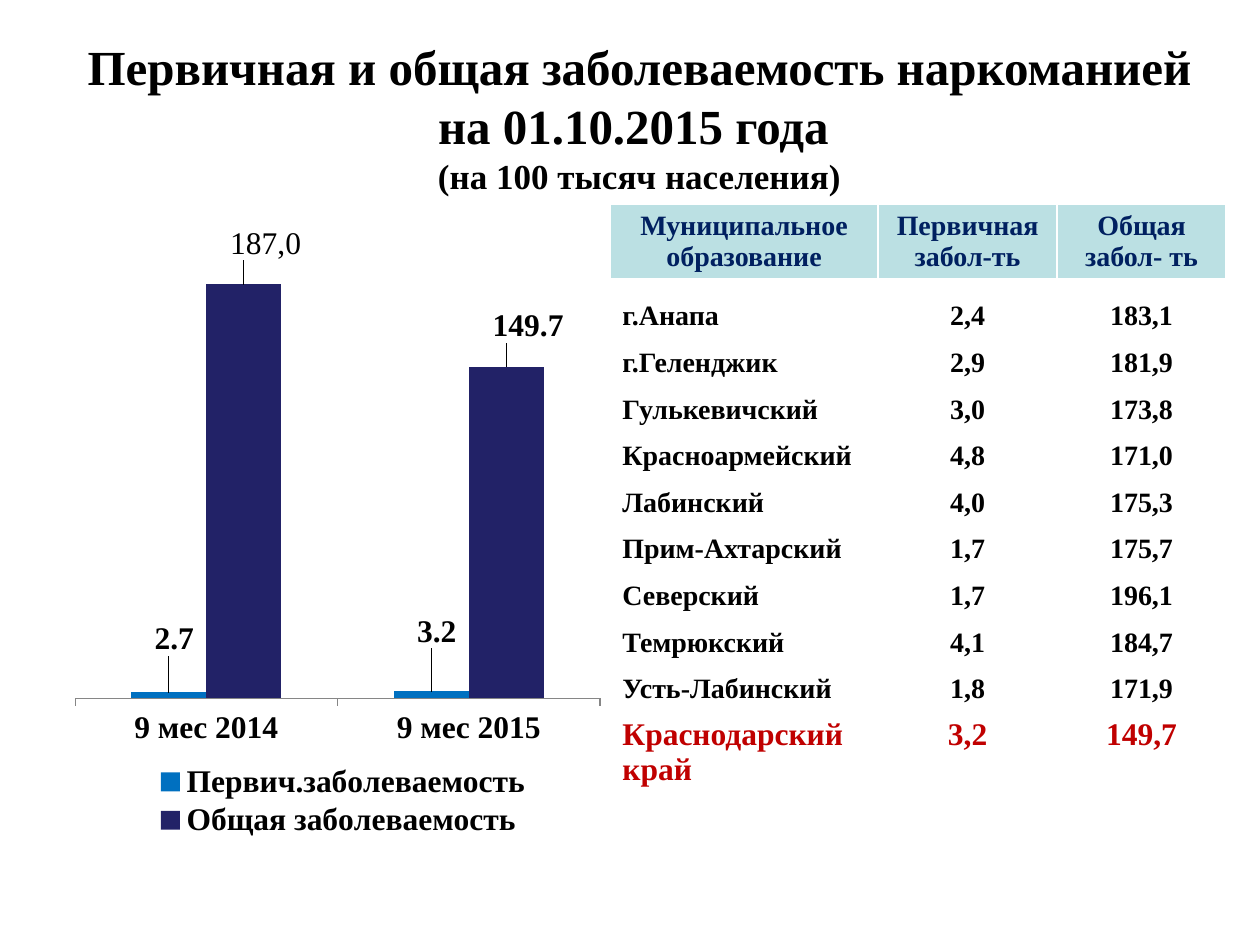
from copy import deepcopy

from lxml import etree
from pptx import Presentation
from pptx.chart.data import CategoryChartData
from pptx.dml.color import RGBColor
from pptx.enum.chart import XL_CHART_TYPE as ChartType
from pptx.enum.chart import XL_LABEL_POSITION as LabelPos
from pptx.enum.chart import XL_LEGEND_POSITION as LegendPos
from pptx.enum.chart import XL_TICK_MARK as Tick
from pptx.enum.text import MSO_ANCHOR as Anchor
from pptx.enum.text import PP_ALIGN as Align
from pptx.oxml.ns import qn
from pptx.util import Inches, Pt

FONT = "Times New Roman"
BLACK, NAVY, RED = "000000", "002060", "C00000"

DISTRICTS = [
    ("г.Анапа", "2,4", "183,1"),
    ("г.Геленджик", "2,9", "181,9"),
    ("Гулькевичский", "3,0", "173,8"),
    ("Красноармейский", "4,8", "171,0"),
    ("Лабинский", "4,0", "175,3"),
    ("Прим-Ахтарский", "1,7", "175,7"),
    ("Северский", "1,7", "196,1"),
    ("Темрюкский", "4,1", "184,7"),
    ("Усть-Лабинский", "1,8", "171,9"),
]
HEADER = ["Муниципальное образование", "Первичная забол-ть", "Общая забол- ть"]
REGION = ["Краснодарский край", "3,2", "149,7"]

# name, values, colour, label offsets as fractions of the chart
SERIES = [
    ("Первич.заболеваемость", (2.7, 3.2), "0070C0", [(0.01, -0.05), (0.01, -0.06)]),
    ("Общая заболеваемость", (187, 149.7), "222267", [(0.04, -0.03), (0.04, -0.03)]),
]


def rgb(value):
    return RGBColor.from_string(value)


def style(font, size, color=BLACK, bold=True):
    font.name, font.size, font.bold = FONT, Pt(size), bold
    font.color.rgb = rgb(color)


def place(shape, left, top, width, height):
    shape.left, shape.top = Inches(left), Inches(top)
    shape.width, shape.height = Inches(width), Inches(height)


def set_layout(parent, index, **values):
    """Give a chart part a manual layout; x and y are fractions of the chart."""
    for old in parent.findall(qn("c:layout")):
        parent.remove(old)
    layout = etree.Element(qn("c:layout"))
    manual = etree.SubElement(layout, qn("c:manualLayout"))
    for tag, value in values.items():
        etree.SubElement(manual, qn(f"c:{tag}")).set("val", str(value))
    parent.insert(index, layout)


def add_title(slide):
    title = slide.shapes.title
    place(title, 0.51, 0.3, 9.13, 1.25)
    tf = title.text_frame
    tf.vertical_anchor = Anchor.MIDDLE
    p = tf.paragraphs[0]
    p.text = ("Первичная и общая заболеваемость наркоманией на 01.10.2015 года \v"
              "(на 100 тысяч населения)")
    p.alignment = Align.CENTER
    for r, size in zip(p.runs, (28, 20)):
        style(r.font, size)
    # The line break takes the size of the line it ends
    line_break = p._p.find(qn("a:br"))
    line_break.append(deepcopy(p.runs[0]._r.find(qn("a:rPr"))))


def add_labels(series, offsets):
    labels = series.data_labels
    labels.show_value = True
    labels.position = LabelPos.OUTSIDE_END
    style(labels.font, 18)
    for i, (x, y) in enumerate(offsets):
        label = series.points[i].data_label
        style(label.font, 18)
        label.position = LabelPos.OUTSIDE_END
        dLbl = series._element.findall(".//" + qn("c:dLbl"))[i]
        set_layout(dLbl, 1, x=x, y=y)


def add_chart(slide):
    data = CategoryChartData()
    data.categories = ["9 мес 2014", "9 мес 2015"]
    for name, values, _, _ in SERIES:
        data.add_series(name, values)
    chart = slide.shapes.add_chart(
        ChartType.COLUMN_CLUSTERED, Inches(0.51), Inches(1.78),
        Inches(4.34), Inches(4.95), data).chart
    chart.has_title = False
    chart.font.name, chart.font.size = "Arial", Pt(18)
    chart.font.color.rgb = rgb(BLACK)

    plot = chart.plots[0]
    plot.gap_width, plot.overlap = 150, 0
    plot.vary_by_categories = False
    for series, (_, _, color, offsets) in zip(plot.series, SERIES):
        series.format.fill.solid()
        series.format.fill.fore_color.rgb = rgb(color)
        add_labels(series, offsets)
    total = plot.series[1].points[0].data_label.text_frame
    total.text = "187,0"
    style(total.paragraphs[0].runs[0].font, 18, bold=False)

    axis = chart.category_axis
    axis.major_tick_mark = Tick.OUTSIDE
    axis.format.line.color.rgb = rgb("868686")
    style(axis.tick_labels.font, 18)
    values = chart.value_axis
    values.visible = False
    values.has_major_gridlines = False
    values.minimum_scale, values.maximum_scale = 0, 200

    chart.has_legend = True
    legend = chart.legend
    legend.position = LegendPos.BOTTOM
    legend.include_in_layout = False
    style(legend.font, 18)
    set_layout(legend._element, 1, xMode="edge", yMode="edge",
               x=0.16, y=0.86, w=0.7, h=0.13)
    plot_area = chart._chartSpace.find(".//" + qn("c:plotArea"))
    set_layout(plot_area, 0, layoutTarget="inner", xMode="edge", yMode="edge",
               x=0.02, y=0.05, w=0.96, h=0.71)


def fill_cell(cell, lines, size, color, align, spacing=None, fill=None):
    if fill:
        cell.fill.solid()
        cell.fill.fore_color.rgb = rgb(fill)
    else:
        cell.fill.background()
    tf = cell.text_frame
    tf.text = "\n".join(lines)
    for p in tf.paragraphs:
        p.alignment = align
        if spacing:
            p.line_spacing = spacing
        style(p.runs[0].font, size, color)


def add_table(slide):
    table = slide.shapes.add_table(
        3, 3, Inches(4.84), Inches(1.62), Inches(4.89), Inches(4.19)).table
    table.horz_banding = False
    for column, width in zip(table.columns, (2.13, 1.42, 1.34)):
        column.width = Inches(width)
    for row, height in zip(table.rows, (0.58, 3.08, 0.53)):
        row.height = Inches(height)
    for c, lines in enumerate(zip(*DISTRICTS)):
        align = Align.CENTER if c else Align.LEFT
        fill_cell(table.cell(0, c), [HEADER[c]], 16, NAVY, Align.CENTER, fill="BBE0E3")
        fill_cell(table.cell(1, c), lines, 16, BLACK, align, spacing=1.5)
        fill_cell(table.cell(2, c), [REGION[c]], 18, RED, align)


def main():
    prs = Presentation()
    prs.slide_width, prs.slide_height = Inches(10), Inches(7.5)
    slide = prs.slides.add_slide(prs.slide_layouts[5])
    add_title(slide)
    add_chart(slide)
    add_table(slide)
    prs.save("out.pptx")


if __name__ == "__main__":
    main()
